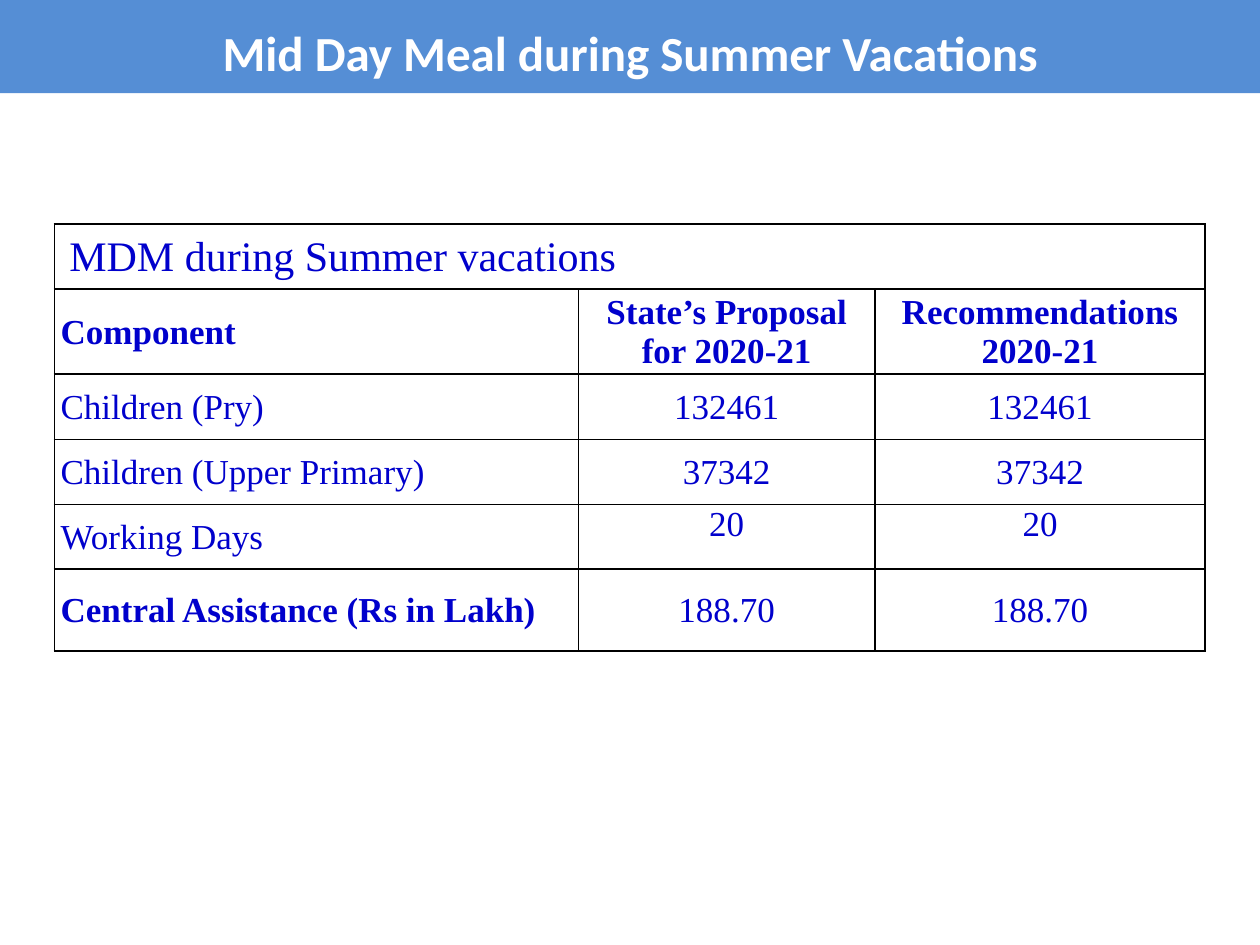
from pptx import Presentation
from pptx.dml.color import RGBColor
from pptx.enum.text import MSO_ANCHOR, MSO_AUTO_SIZE, PP_ALIGN
from pptx.oxml import parse_xml
from pptx.oxml.ns import nsdecls
from pptx.util import Pt

# Content
TITLE = "Mid Day Meal during Summer Vacations"
HEAD = "MDM during Summer vacations"
ROWS = [
    ("Component", "State’s Proposal for 2020-21", "Recommendations\n2020-21"),
    ("Children (Pry)", "132461", "132461"),
    ("Children (Upper Primary)", "37342", "37342"),
    ("Working Days", "20", "20"),
    ("Central Assistance (Rs in Lakh)", "188.70", "188.70"),
]
WIDTHS = [299.5, 169.5, 188.7]
HEIGHTS = [37, 48.5, 37.2, 37.2, 37, 46.8]
LEFT, TOP = 31, 128.1

WHITE = RGBColor(0xFF, 0xFF, 0xFF)
BAND = RGBColor(0x55, 0x8E, 0xD5)
BLUE = RGBColor(0x00, 0x00, 0xCC)


def style(frame, font, size, color, bold, align):
    for para in frame.paragraphs:
        para.alignment = align
        for run in para.runs:
            run.font.name = font
            run.font.size = Pt(size)
            run.font.bold = bold
            run.font.color.rgb = color


def border(cell):
    props = cell._tc.get_or_add_tcPr()
    for i, side in enumerate(("lnL", "lnR", "lnT", "lnB")):
        props.insert(i, parse_xml(
            f'<a:{side} {nsdecls("a")} w="12700"><a:solidFill>'
            f'<a:srgbClr val="000000"/></a:solidFill></a:{side}>'))


def fill(cell, text, size=20, bold=False, align=PP_ALIGN.LEFT, pad=3.6):
    cell.text_frame.text = text
    style(cell.text_frame, "Times New Roman", size, BLUE, bold, align)
    cell.vertical_anchor = MSO_ANCHOR.MIDDLE
    cell.margin_left = cell.margin_right = Pt(pad)
    cell.margin_top, cell.margin_bottom = Pt(0.7), Pt(0)


deck = Presentation()
deck.slide_width, deck.slide_height = Pt(720), Pt(540)
slide = deck.slides.add_slide(deck.slide_layouts[5])

# Title band
title = slide.shapes.title
title.left, title.top, title.width, title.height = Pt(0), Pt(-2), Pt(720), Pt(50.4)
title.fill.solid()
title.fill.fore_color.rgb = BAND
frame = title.text_frame
frame.text = TITLE
frame.auto_size = MSO_AUTO_SIZE.SHAPE_TO_FIT_TEXT
frame.vertical_anchor = MSO_ANCHOR.MIDDLE
frame.paragraphs[0].line_spacing = 1.4
style(frame, "Calibri", 28, WHITE, True, PP_ALIGN.CENTER)

# Table grid
table = slide.shapes.add_table(
    len(HEIGHTS), len(WIDTHS), Pt(LEFT), Pt(TOP),
    Pt(sum(WIDTHS)), Pt(sum(HEIGHTS))).table
for col, width in zip(table.columns, WIDTHS):
    col.width = Pt(width)
for row, height in zip(table.rows, HEIGHTS):
    row.height = Pt(height)
for cell in table.iter_cells():
    cell.fill.solid()
    cell.fill.fore_color.rgb = WHITE
    border(cell)

# Heading row across all columns
top = table.cell(0, 0)
top.merge(table.cell(0, len(WIDTHS) - 1))
fill(top, HEAD, size=24, pad=8.6)

# Component rows
for r, row in enumerate(ROWS, 1):
    for c, text in enumerate(row):
        bold = r == 1 or (r == len(ROWS) and c == 0)
        align = PP_ALIGN.CENTER if c else PP_ALIGN.LEFT
        fill(table.cell(r, c), text, bold=bold, align=align,
             pad=0.7 if c and r > 1 else 3.6)
        if c and row[0] == "Working Days":
            table.cell(r, c).vertical_anchor = MSO_ANCHOR.TOP

deck.save("out.pptx")
